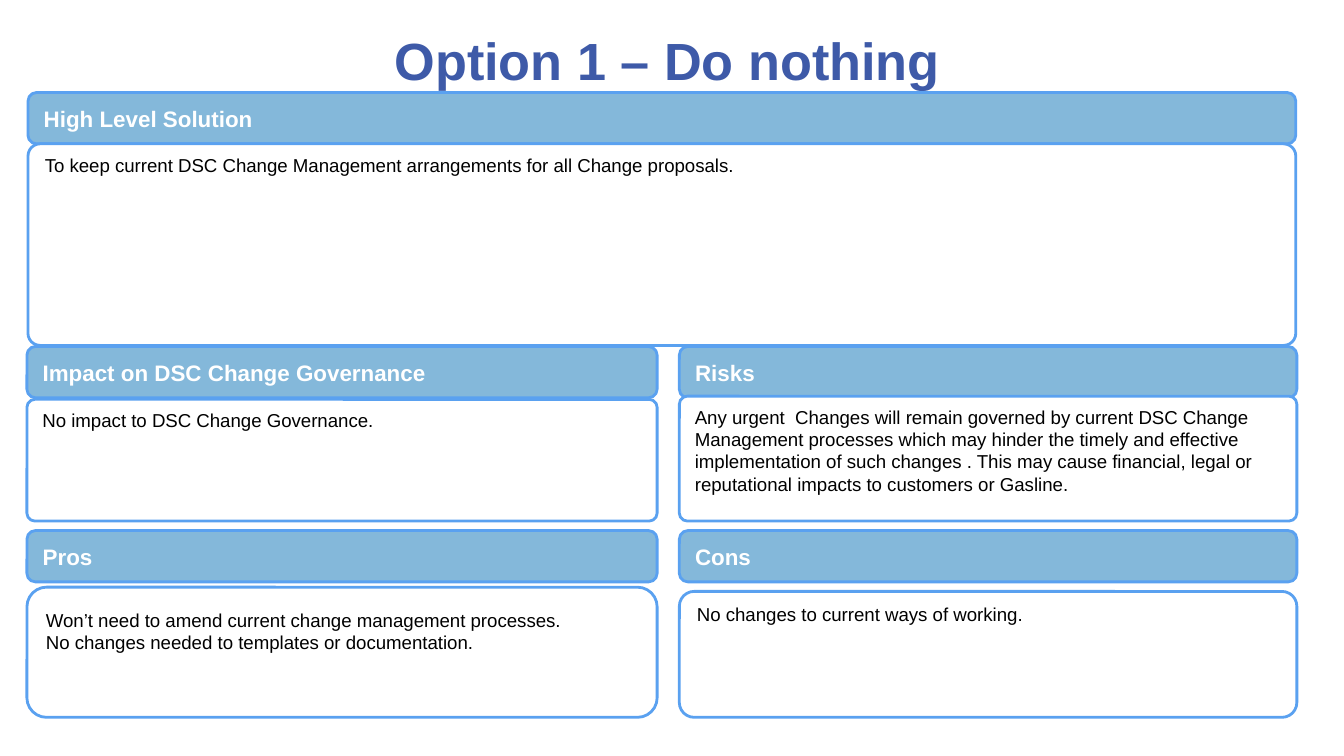
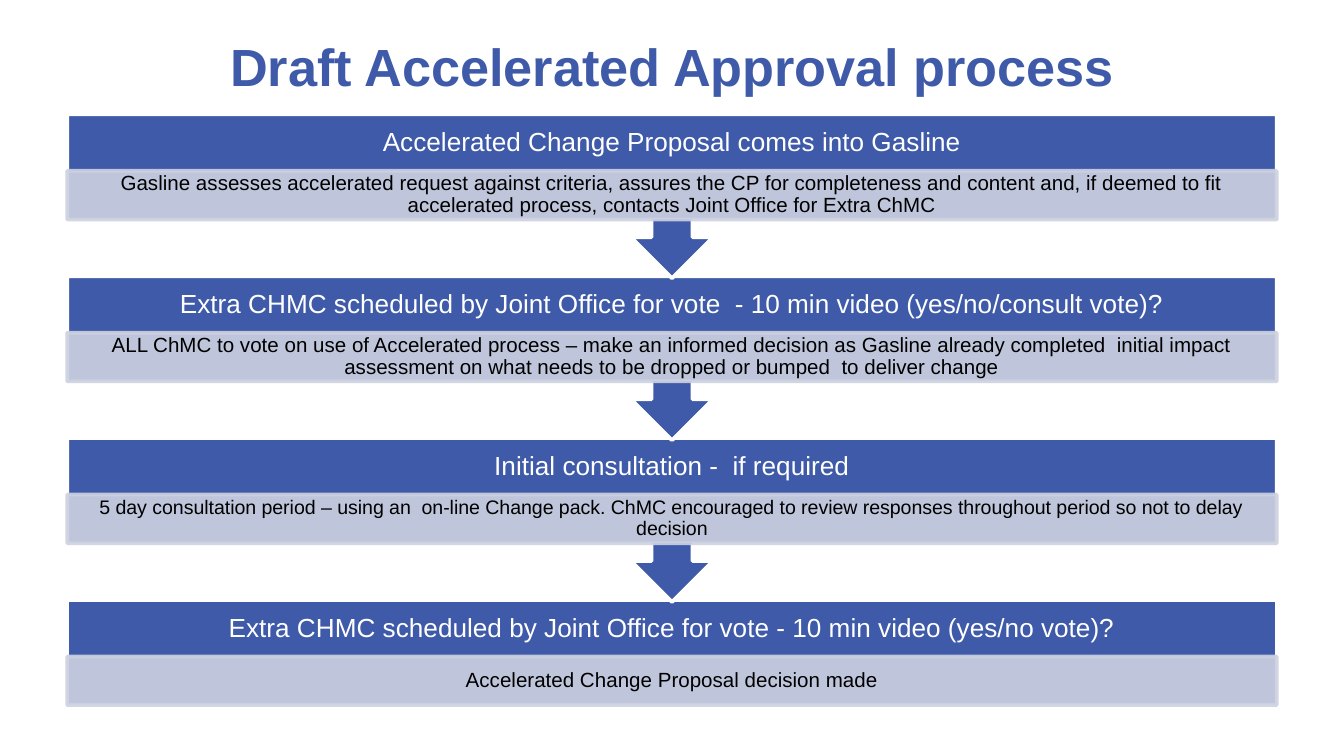
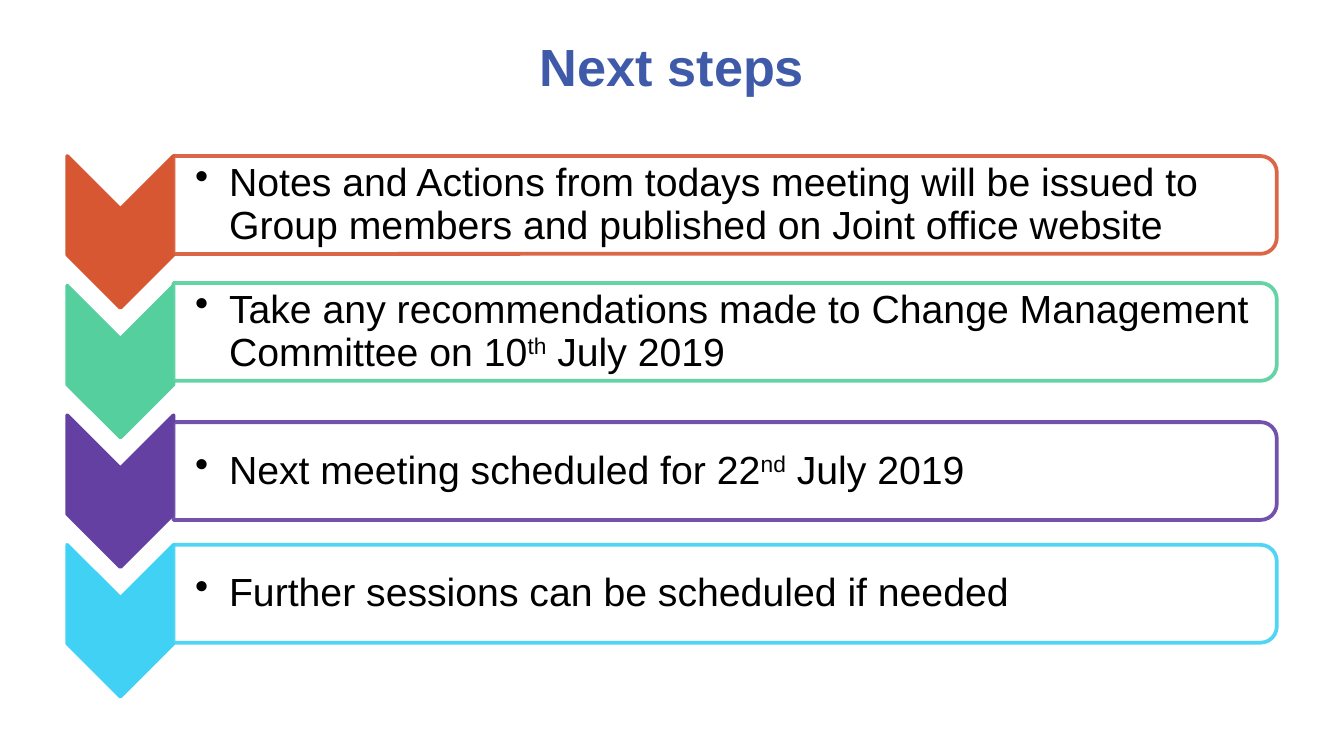
from dataclasses import dataclass

from lxml.etree import SubElement
from pptx import Presentation
from pptx.dml.color import RGBColor
from pptx.enum.shapes import MSO_SHAPE
from pptx.enum.text import MSO_ANCHOR, PP_ALIGN
from pptx.oxml.ns import qn
from pptx.util import Cm, Pt


@dataclass(frozen=True)
class Theme:
    font: str = "Arial"
    # Colours
    navy: str = "3E5AA8"
    sky: str = "84B8DA"
    edge: str = "5AA1F0"
    mist: str = "CED2E1"
    white: str = "FFFFFF"
    black: str = "000000"
    steps: tuple = ("D75733", "56CF9E", "6440A3", "40D1F5")
    # Type sizes
    title: float = 28
    head: float = 12
    body: float = 10
    stage: float = 14
    note: float = 11
    point: float = 21


T = Theme()


def tint(fill, color, alpha):
    """Set a solid colour, with alpha in percent."""
    fill.solid()
    fill.fore_color.rgb = RGBColor.from_string(color)
    if alpha < 100:
        tone = fill._xPr.find(qn("a:solidFill"))[0]
        SubElement(tone, qn("a:alpha")).set("val", str(alpha * 1000))


def draw(slide, kind, box, fill, line, width=2, alpha=100, turn=0):
    """Add a shape; box is its left, top, width and height in cm as seen."""
    x, y, w, h = box
    if turn == 90:
        x, y, w, h = x + (w - h) / 2, y + (h - w) / 2, h, w
    shape = slide.shapes.add_shape(kind, Cm(x), Cm(y), Cm(w), Cm(h))
    shape.shadow.inherit = False
    shape.rotation = turn
    tint(shape.fill, fill, alpha)
    tint(shape.line.fill, line, alpha)
    shape.line.width = Pt(width)
    return shape


def label(slide, box):
    return slide.shapes.add_textbox(*map(Cm, box))


def write(shape, text, size, color=T.black, bold=False, align=PP_ALIGN.LEFT,
          anchor=MSO_ANCHOR.MIDDLE, pad=(0.25, 0.13, 0.25, 0.13),
          pitch=1.0, bullet=False):
    """Fill a shape with text; a line is a paragraph, ^marks^ are raised."""
    frame = shape.text_frame
    frame.word_wrap = True
    frame.vertical_anchor = anchor
    (frame.margin_left, frame.margin_top,
     frame.margin_right, frame.margin_bottom) = map(Cm, pad)
    for i, part in enumerate(text.split("\n")):
        para = frame.add_paragraph() if i else frame.paragraphs[0]
        if bullet:
            props = para._p.get_or_add_pPr()
            props.set("marL", str(Cm(0.64)))
            props.set("indent", str(Cm(-0.64)))
            SubElement(props, qn("a:buChar")).set("char", "•")
        para.alignment = align
        para.line_spacing = pitch
        for j, piece in enumerate(part.split("^")):
            run = para.add_run()
            run.text = piece
            font = run.font
            font.name, font.size, font.bold = T.font, Pt(size), bold
            font.color.rgb = RGBColor.from_string(color)
            if j % 2:
                run._r.get_or_add_rPr().set("baseline", "30000")


def title(slide, text, box=(1.27, 0.36, 22.86, 1.78)):
    write(label(slide, box), text, T.title, color=T.navy, bold=True,
          align=PP_ALIGN.CENTER)


# Option slide: headed cards
def card(slide, box, head, body, gap=0.0, curve=0.15, top=0.13):
    x, y, w, h = box
    bar = 0.97
    rest = h - bar - gap
    strip = draw(slide, MSO_SHAPE.ROUNDED_RECTANGLE, (x, y, w, bar),
                 T.sky, T.edge, width=1.5)
    strip.adjustments[0] = 0.167
    write(strip, head, T.head, color=T.white, bold=True)
    panel = draw(slide, MSO_SHAPE.ROUNDED_RECTANGLE,
                 (x, y + bar + gap, w, rest), T.white, T.edge, width=1.5)
    panel.adjustments[0] = curve / rest
    write(panel, body, T.body, anchor=MSO_ANCHOR.TOP,
          pad=(0.25, top, 0.25, 0.13))


def option(slide):
    title(slide, "Option 1 – Do nothing", (0.53, -0.3, 24.16, 2.84))
    left, right = (0.51, 11.91), (12.84, 11.67)
    mid, low = (6.55, 3.3), (10.03, 3.53)

    def cell(col, row):
        return col[0], row[0], col[1], row[1]

    card(slide, (0.53, 1.75, 23.96, 4.78), "High Level Solution",
         "To keep current DSC Change Management arrangements for all Change "
         "proposals.", curve=0.23)
    card(slide, cell(left, mid), "Impact on DSC Change Governance",
         "No impact to DSC Change Governance.", gap=0.03)
    card(slide, cell(right, mid), "Risks",
         "Any urgent  Changes will remain governed by current DSC Change "
         "Management processes which may hinder the timely and effective "
         "implementation of such changes . This may cause financial, legal "
         "or reputational impacts to customers or Gasline.", gap=-0.03)
    card(slide, cell(left, low), "Pros",
         "Won’t need to amend current change management processes.\n"
         "No changes needed to templates or documentation.",
         gap=0.1, curve=0.37, top=0.3)
    card(slide, cell(right, low), "Cons",
         "No changes to current ways of working.", gap=0.18, curve=0.28)


# Process slide: stages from top to bottom
STAGES = (
    ("Accelerated Change Proposal comes into Gasline",
     "Gasline assesses accelerated request against criteria, assures the CP "
     "for completeness and content and, if deemed to fit accelerated "
     "process, contacts Joint Office for Extra ChMC", T.note),
    ("Extra CHMC scheduled by Joint Office for vote  - 10 min video "
     "(yes/no/consult vote)?",
     "ALL ChMC to vote on use of Accelerated process – make an informed "
     "decision as Gasline already completed  initial impact assessment on "
     "what needs to be dropped or bumped  to deliver change", T.note),
    ("Initial consultation -  if required",
     "5 day consultation period – using an  on-line Change pack. ChMC "
     "encouraged to review responses throughout period so not to delay "
     "decision", T.note - 0.5),
    ("Extra CHMC scheduled by Joint Office for vote - 10 min video "
     "(yes/no vote)?",
     "Accelerated Change Proposal decision made", T.note),
)


def stage(slide, box, head, note, size, last):
    x, y, w, h = box
    if last:
        draw(slide, MSO_SHAPE.RECTANGLE, (x, y, w, 2.01), T.navy, T.white)
    else:
        draw(slide, MSO_SHAPE.UP_ARROW_CALLOUT, box, T.navy, T.white,
             turn=180)
    write(label(slide, (x, y, w, 1.09)), head, T.stage, color=T.white,
          align=PP_ALIGN.CENTER, pad=(0.28,) * 4, pitch=0.9)
    band = draw(slide, MSO_SHAPE.RECTANGLE, (x, y + 1.07, w, 0.92),
                T.mist, T.mist, alpha=90)
    write(band, note, size, align=PP_ALIGN.CENTER,
          pad=(0.23, 0.05, 0.23, 0.05), pitch=0.9)


def process(slide):
    title(slide, "Draft Accelerated Approval process")
    end = len(STAGES) - 1
    # The upper arrows lie over the stage below them
    for i in range(end, -1, -1):
        stage(slide, (1.27, 2.16 + 3.06 * i, 22.86, 3.1), *STAGES[i],
              last=i == end)


# Next steps slide: chevrons with outlined bars
POINTS = (
    ("Notes and Actions from todays meeting will be issued to Group members "
     "and published on Joint office website", 0),
    ("Take any recommendations made to Change Management Committee on "
     "10^th^ July 2019", -0.05),
    ("Next meeting scheduled for 22^nd^ July 2019", 0.13),
    ("Further sessions can be scheduled if needed", 0),
)


def step(slide, box, text, shift, color):
    x, y, w, h = box
    tab = 2.01
    draw(slide, MSO_SHAPE.CHEVRON, (x, y, tab, h), color, color, turn=90)
    bar = x + tab, y + shift, w - tab, 1.85
    draw(slide, MSO_SHAPE.ROUND_2_SAME_RECTANGLE, bar, T.white, color,
         alpha=90, turn=90)
    write(label(slide, (bar[0], bar[1] + 0.09, bar[2] - 0.08, 1.68)), text,
          T.point, pad=(0.41, 0.03, 0.03, 0.03), pitch=0.9, bullet=True)


def future(slide):
    title(slide, "Next steps")
    for i, ((text, shift), color) in enumerate(zip(POINTS, T.steps)):
        step(slide, (1.27, 2.95 + 2.45 * i, 22.86, 2.87), text, shift, color)


def main():
    deck = Presentation()
    deck.slide_width, deck.slide_height = Cm(25.4), Cm(14.29)
    for build in (option, process, future):
        build(deck.slides.add_slide(deck.slide_layouts[6]))
    deck.save("out.pptx")


if __name__ == "__main__":
    main()
